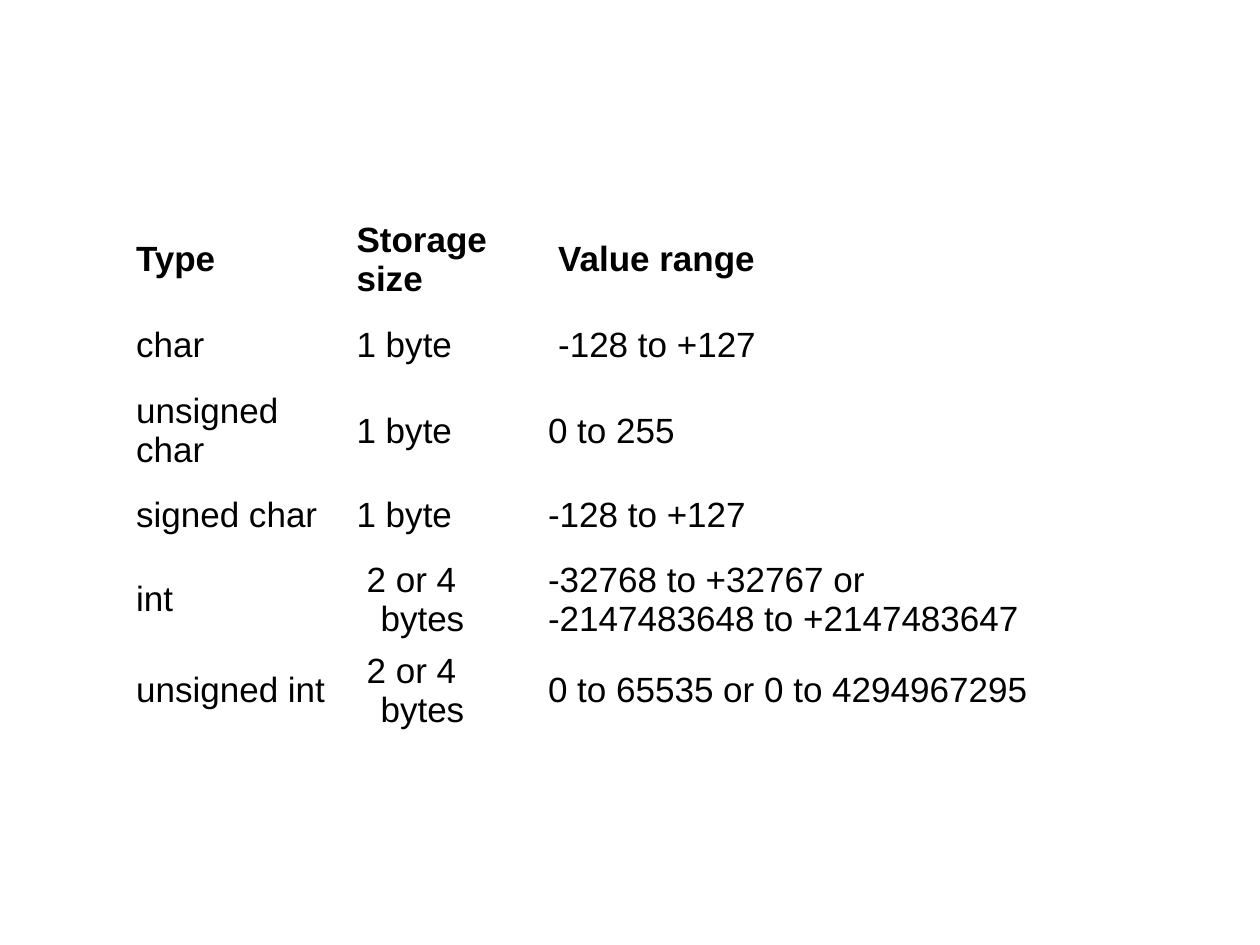
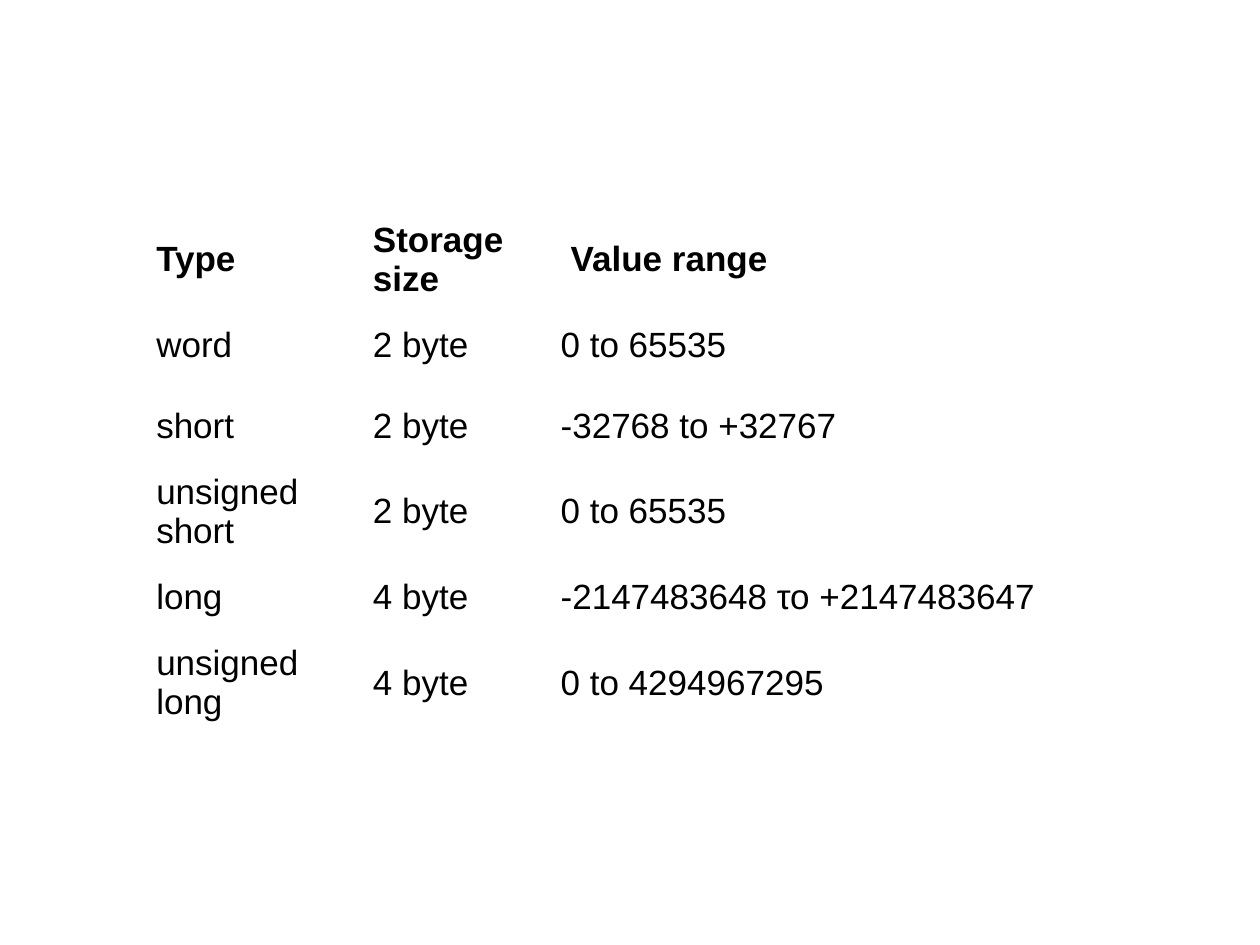
from pptx import Presentation
from pptx.dml.color import RGBColor
from pptx.enum import text
from pptx.util import Inches, Pt

COLORS = {"text": "000000", "background": "FFFFFF"}
FONT = "Arial"
FONT_SIZE = 20
TABLE_TOP = 1.7
ROW_HEIGHT = 0.64
HEADER = ["Type", "Storage size", "Value range"]

# Left margin and first-line indent of a paragraph, in inches
HANGING = (0.38, -0.38)
FLUSH = (0, 0)
NUDGED = (0.08, 0)
HEADER_INDENTS = {(0, 1): FLUSH, (0, 2): NUDGED}

TABLES = [
    {
        "left": 0.98,
        "columns": [1.75, 1.52, 4.68],
        "row_heights": {3: 0.62},
        "rows": [
            ["char", "1 byte", "-128 to +127"],
            ["unsigned\nchar", "1 byte", "0 to 255"],
            ["signed char", "1 byte", "-128 to +127"],
            ["int", "2 or 4 bytes", "-32768 to +32767 or\n-2147483648 to +2147483647"],
            ["unsigned int", "2 or 4 bytes", "0 to 65535 or 0 to 4294967295"],
        ],
        "indents": {(1, 2): NUDGED, (4, 1): (0.19, -0.11), (5, 1): (0.19, -0.11)},
    },
    {
        "left": 1.14,
        "columns": [1.72, 1.49, 4.59],
        "row_heights": {},
        "rows": [
            ["word", "2 byte", "0 to 65535"],
            ["short", "2 byte", "-32768 to +32767"],
            ["unsigned short", "2 byte", "0 to 65535"],
            ["long", "4 byte", "-2147483648 το +2147483647"],
            ["unsigned\nlong", "4 byte", "0 to 4294967295"],
        ],
        "indents": {(3, 0): FLUSH, (5, 0): (0.06, -0.06)},
    },
]


def write_cell(cell, wording, indent, bold):
    cell.fill.background()
    cell.vertical_anchor = text.MSO_ANCHOR.MIDDLE
    cell.text_frame.text = wording
    for paragraph in cell.text_frame.paragraphs:
        properties = paragraph._p.get_or_add_pPr()
        properties.set("marL", str(Inches(indent[0])))
        properties.set("indent", str(Inches(indent[1])))
        for span in paragraph.runs:
            span.font.name = FONT
            span.font.size = Pt(FONT_SIZE)
            span.font.bold = bold
            span.font.color.rgb = RGBColor.from_string(COLORS["text"])


deck = Presentation()
deck.slide_width = Inches(10)
deck.slide_height = Inches(7.5)

for spec_table in TABLES:
    page = deck.slides.add_slide(deck.slide_layouts[6])
    page.background.fill.solid()
    page.background.fill.fore_color.rgb = RGBColor.from_string(COLORS["background"])

    rows = [HEADER] + spec_table["rows"]
    columns = spec_table["columns"]
    indents = HEADER_INDENTS | spec_table["indents"]
    table = page.shapes.add_table(
        len(rows), len(columns),
        Inches(spec_table["left"]), Inches(TABLE_TOP),
        Inches(sum(columns)), Inches(ROW_HEIGHT * len(rows)),
    ).table
    table.first_row = False
    table.horz_banding = False

    for column, width in zip(table.columns, columns):
        column.width = Inches(width)
    for r, row in enumerate(rows):
        table.rows[r].height = Inches(spec_table["row_heights"].get(r, ROW_HEIGHT))
        for c, wording in enumerate(row):
            write_cell(table.cell(r, c), wording, indents.get((r, c), HANGING), r == 0)

deck.save("out.pptx")
